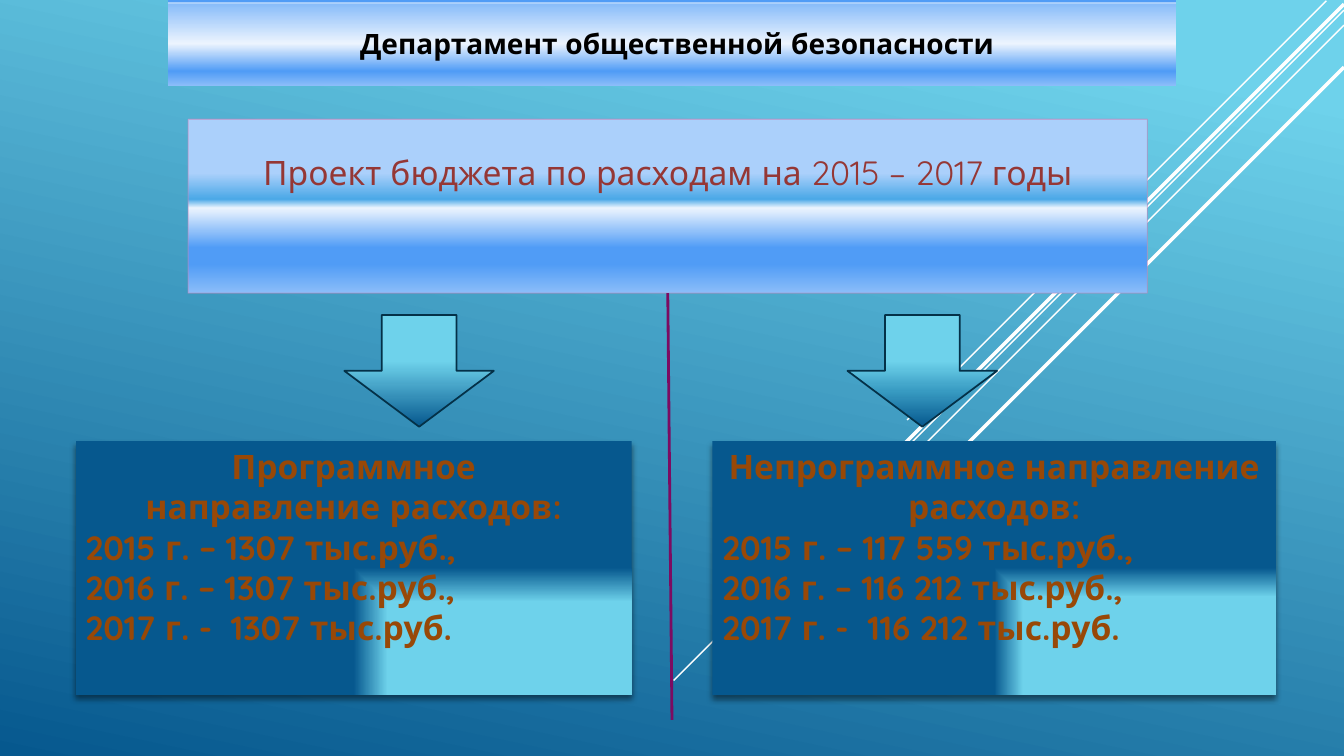
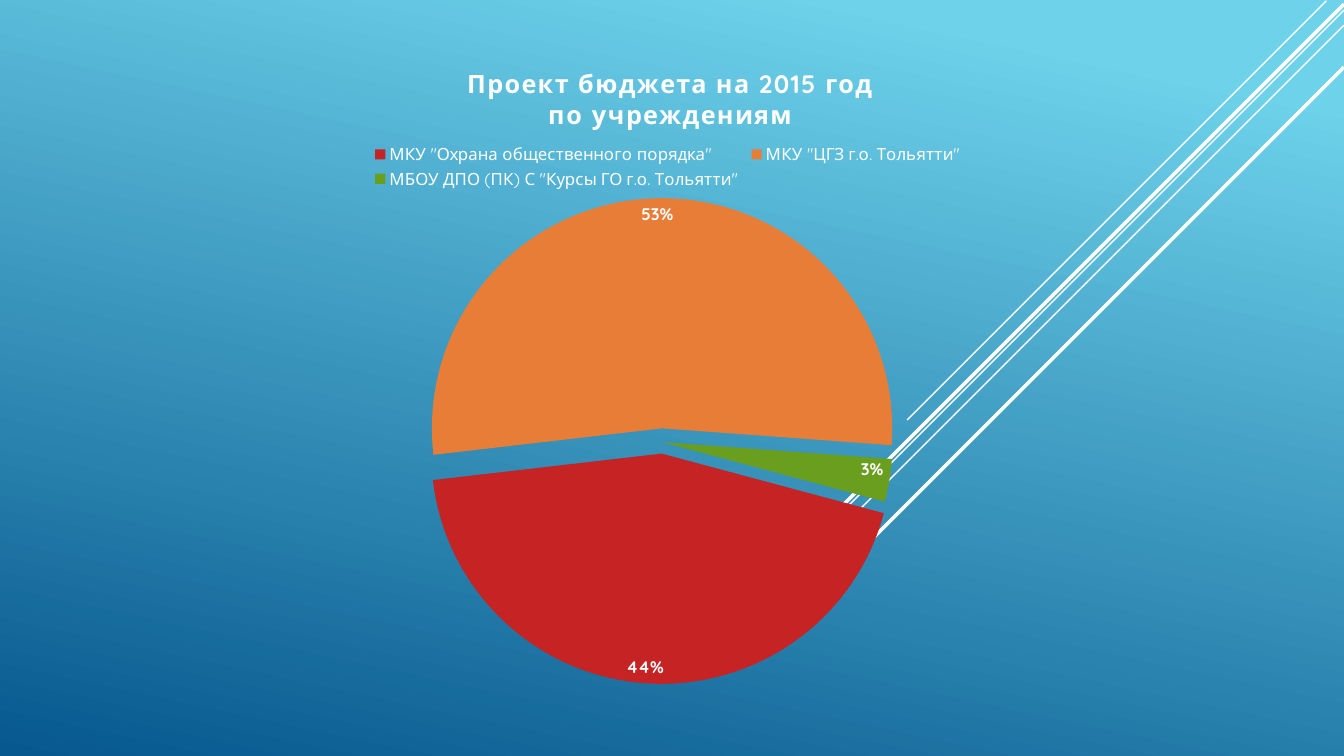
"""Build a two-slide deck on a public safety department's draft budget."""
from dataclasses import dataclass
from typing import NamedTuple

from lxml import etree
from pptx import Presentation
from pptx.chart.data import CategoryChartData
from pptx.dml.color import RGBColor
from pptx.enum.chart import XL_CHART_TYPE, XL_LABEL_POSITION, XL_LEGEND_POSITION
from pptx.enum.shapes import MSO_CONNECTOR, MSO_SHAPE
from pptx.enum.text import MSO_ANCHOR, PP_ALIGN
from pptx.oxml.ns import qn
from pptx.util import Emu, Inches, Pt

PIE = XL_CHART_TYPE.PIE
INSIDE_END = XL_LABEL_POSITION.INSIDE_END
LEGEND_TOP = XL_LEGEND_POSITION.TOP
STRAIGHT = MSO_CONNECTOR.STRAIGHT
RECTANGLE, DOWN_ARROW = MSO_SHAPE.RECTANGLE, MSO_SHAPE.DOWN_ARROW
TOP, MIDDLE = MSO_ANCHOR.TOP, MSO_ANCHOR.MIDDLE
LEFT, CENTER = PP_ALIGN.LEFT, PP_ALIGN.CENTER
BOTTOM_SIDE = 2
COLUMNS, ROWS = 160, 90
CELL = Inches(1) // 12
BLANK_LAYOUT = 6

Stops = tuple[tuple[int, str], ...]


@dataclass(frozen=True)
class Theme:
    """Colours, gradients and type sizes of the deck."""
    font: str = "Quicksand"
    white: str = "FFFFFF"
    black: str = "000000"
    heading: str = "953735"
    body: str = "984807"
    divider: str = "7C0B61"
    heading_edge: str = "C089BD"
    arrow_edge: str = "043148"
    slices: tuple[str, ...] = ("C62324", "E87D37", "6A9E1F")
    backdrop: Stops = ((10, "6ED2EB"), (100, "06588E"))
    title_band: Stops = ((2, "509CF6"), (3, "ABD0FB"), (5, "ABD0FB"), (5, "8ABDF9"),
                         (51, "ECF4FE"), (83, "509CF6"), (100, "8BBDF9"))
    heading_band: Stops = ((31, "ABD0FB"), (46, "4AA8E7"), (51, "ECF4FE"),
                           (74, "509CF6"), (83, "509CF6"), (100, "8BBDF9"))
    title_size: int = 20
    body_size: int = 24
    chart_title_size: int = 18
    legend_size: int = 12
    chart_size: int = 10


THEME = Theme()


class Frame(NamedTuple):
    """Place and size in grid columns and rows."""
    column: float
    row: float
    width: float
    height: float

    def lengths(self) -> list[Emu]:
        """Return the four lengths for python-pptx."""
        return [cells(value) for value in self]


class Ray(NamedTuple):
    """Diagonal line running down and left from a start cell."""
    column: float
    row: float
    reach: float
    points: float


class Direction(NamedTuple):
    """Spending direction: its box, heading lines, amounts, arrow and stops."""
    frame: Frame
    heading: tuple[str, ...]
    amounts: tuple[str, ...]
    arrow_column: float
    box_stops: Stops
    arrow_stops: Stops


class Share(NamedTuple):
    """Slice of the budget chart."""
    name: str
    percent: int
    explosion: int


RAYS = (
    Ray(157.9, 0.1, 49.9, 1),
    Ray(160, 1.2, 79.8, 1),
    Ray(160, 3, 65.1, 1),
    Ray(160, 0.5, 63.7, 2.5),
    Ray(160, 8, 57, 2.5),
)
DIRECTIONS = (
    Direction(
        Frame(9, 52.5, 66.2, 30.2),
        ("Программное", "направление расходов:"),
        ("2015 г. – 1307 тыс.руб.,", "2016 г. – 1307 тыс.руб.,", "2017 г. -  1307 тыс.руб."),
        41, ((73, "6ED2EB"), (100, "06588E")), ((41, "6ED2EB"), (100, "06588E"))),
    Direction(
        Frame(84.8, 52.5, 67.1, 30.2),
        ("Непрограммное направление расходов:",),
        ("2015 г. – 117 559 тыс.руб.,", "2016 г. – 116 212 тыс.руб.,",
         "2017 г. -  116 212 тыс.руб."),
        100.9, ((77, "6ED2EB"), (100, "06588E")),
        ((41, "6ED2EB"), (68, "389BC2"), (100, "06588E"))),
)
SHARES = (
    Share('МКУ "Охрана общественного порядка"', 44, 5),
    Share('МКУ "ЦГЗ г.о. Тольятти"', 53, 6),
    Share('МБОУ ДПО (ПК) С "Курсы ГО г.о. Тольятти"', 3, 0),
)


def cells(count: float) -> Emu:
    """Convert grid cells to a length."""
    return Emu(round(count * CELL))


def add_node(parent, tag: str, **attributes):
    """Append an XML child with attributes."""
    return etree.SubElement(parent, qn(tag), {key: str(value) for key, value in attributes.items()})


def paint(fill, owner, stops: Stops, angle: float | None = None) -> None:
    """Give a fill gradient stops, linear by angle or spreading from the lower right corner."""
    fill.gradient()
    gradient = owner.find(".//" + qn("a:gradFill"))
    for child in list(gradient):
        gradient.remove(child)
    stop_list = add_node(gradient, "a:gsLst")
    for position, colour in stops:
        add_node(add_node(stop_list, "a:gs", pos=position * 1000), "a:srgbClr", val=colour)
    if angle is None:
        add_node(add_node(gradient, "a:path", path="rect"), "a:fillToRect", l=100000, t=100000)
    else:
        add_node(gradient, "a:lin", ang=round(angle * 60000), scaled=0)


def style_font(font, size: float, colour: str, bold: bool = False) -> None:
    """Set face, size, colour and weight."""
    font.name, font.size, font.bold = THEME.font, Pt(size), bold
    font.color.rgb = RGBColor.from_string(colour)


def style_line(line, colour: str, points: float) -> None:
    """Set an outline's colour and width."""
    line.color.rgb = RGBColor.from_string(colour)
    line.width = Pt(points)


def add_line(page, start: tuple[float, float], end: tuple[float, float],
             colour: str, points: float):
    """Draw a flat straight line between two grid points."""
    line = page.shapes.add_connector(STRAIGHT, *(cells(value) for value in (*start, *end)))
    style_line(line.line, colour, points)
    add_node(line.element.spPr, "a:effectLst")
    return line


def add_panel(page, kind, frame: Frame, stops: Stops, angle: float | None = 90):
    """Draw a gradient shape without outline or shadow."""
    panel = page.shapes.add_shape(kind, *frame.lengths())
    paint(panel.fill, panel.element, stops, angle)
    panel.line.fill.background()
    panel.shadow.inherit = False
    return panel


def write(panel, lines: list[tuple[str, PP_ALIGN]], size: float, colour: str,
          bold: bool, anchor=TOP, spacing: float = 1.0) -> None:
    """Write aligned paragraphs into a shape."""
    frame = panel.text_frame
    frame.word_wrap, frame.vertical_anchor = True, anchor
    frame.text = "\n".join(text for text, _ in lines)
    for para, (_, alignment) in zip(frame.paragraphs, lines):
        para.alignment, para.line_spacing = alignment, spacing
        for span in para.runs:
            style_font(span.font, size, colour, bold)


def cast_shadow(panel) -> None:
    """Drop a soft shadow below a shape."""
    effects = panel.element.spPr.find(qn("a:effectLst"))
    shadow = add_node(effects, "a:outerShdw", blurRad=Pt(4), dist=Pt(3), dir=5400000, rotWithShape=0)
    add_node(add_node(shadow, "a:srgbClr", val=THEME.black), "a:alpha", val=46000)


def add_page(deck):
    """Add a blank page with the diagonal rays."""
    page = deck.slides.add_slide(deck.slide_layouts[BLANK_LAYOUT])
    for ray in RAYS:
        add_line(page, (ray.column, ray.row), (ray.column - ray.reach, ray.row + ray.reach),
                 THEME.white, ray.points)
    return page


def add_direction(page, direction: Direction) -> None:
    """Draw a spending box and the arrow leading to it."""
    box = add_panel(page, RECTANGLE, direction.frame, direction.box_stops, None)
    cast_shadow(box)
    lines = [(text, CENTER) for text in direction.heading]
    lines += [(text, LEFT) for text in direction.amounts]
    write(box, lines, THEME.body_size, THEME.body, True)
    arrow = add_panel(page, DOWN_ARROW, Frame(direction.arrow_column, 37.5, 17.8, 13.3),
                      direction.arrow_stops)
    style_line(arrow.line, THEME.arrow_edge, 1.25)


def build_directions(deck) -> None:
    """Build the page with the two spending directions."""
    page = add_page(deck)
    title = add_panel(page, RECTANGLE, Frame(20, 0, 120, 10.2), THEME.title_band)
    title.text_frame.margin_left, title.text_frame.margin_top = Inches(0.2), Inches(0.12)
    write(title, [("Департамент общественной безопасности", CENTER)],
          THEME.title_size, THEME.black, True, MIDDLE, 0.8)
    heading = add_panel(page, RECTANGLE, Frame(22.4, 14.2, 114.2, 20.7), THEME.heading_band)
    style_line(heading.line, THEME.heading_edge, 0.75)
    edge_colour = heading.element.spPr.find(qn("a:ln")).find(".//" + qn("a:srgbClr"))
    add_node(edge_colour, "a:alpha", val=60000)
    heading.text_frame.margin_top = Inches(0.4)
    write(heading, [("Проект бюджета по расходам на 2015 – 2017 годы", CENTER)],
          THEME.body_size, THEME.heading, False, TOP, 0.8)
    divider = add_line(page, (79.5, 34.9), (80, 85.7), THEME.divider, 2)
    divider.begin_connect(heading, BOTTOM_SIDE)
    for direction in DIRECTIONS:
        add_direction(page, direction)


def place(part, index: int, **shares: float) -> None:
    """Fix a chart part's place in shares of the chart."""
    for layout in part.findall(qn("c:layout")):
        part.remove(layout)
    layout = etree.Element(qn("c:layout"))
    part.insert(index, layout)
    manual = add_node(layout, "c:manualLayout")
    if part.tag == qn("c:plotArea"):
        add_node(manual, "c:layoutTarget", val="inner")
    for mode in ("c:xMode", "c:yMode"):
        add_node(manual, mode, val="edge")
    for name, share in shares.items():
        add_node(manual, "c:" + name, val=share)


def build_shares(deck) -> None:
    """Build the page with the pie chart of institutions."""
    page = add_page(deck)
    data = CategoryChartData()
    data.categories = [share.name for share in SHARES]
    data.add_series("Series 1", [share.percent for share in SHARES])
    frame = Frame(15.7, 4.4, 127.6, 77.2)
    chart = page.shapes.add_chart(PIE, *frame.lengths(), data).chart
    style_font(chart.font, THEME.chart_size, THEME.white)
    chart.has_title = chart.has_legend = True
    title = chart.chart_title.text_frame
    title.text = "Проект бюджета на 2015 год\nпо учреждениям"
    for para in title.paragraphs:
        para.alignment = CENTER
        for span in para.runs:
            style_font(span.font, THEME.chart_title_size, THEME.white, True)
    chart.legend.position, chart.legend.include_in_layout = LEGEND_TOP, False
    style_font(chart.legend.font, THEME.legend_size, THEME.white)
    plot = chart.plots[0]
    plot.vary_by_categories = plot.has_data_labels = True
    labels = plot.data_labels
    labels.show_percentage, labels.show_value, labels.position = True, False, INSIDE_END
    style_font(labels.font, THEME.legend_size, THEME.white, True)
    for index, colour in enumerate(THEME.slices):
        fill = plot.series[0].points[index].format.fill
        fill.solid()
        fill.fore_color.rgb = RGBColor.from_string(colour)
    root = chart.element
    for point, share in zip(root.iter(qn("c:dPt")), SHARES):
        explosion = etree.Element(qn("c:explosion"), val=str(share.explosion))
        point.find(qn("c:spPr")).addprevious(explosion)
    pie = root.find(".//" + qn("c:pieChart"))
    for angle in pie.findall(qn("c:firstSliceAng")):
        pie.remove(angle)
    add_node(pie, "c:firstSliceAng", val=105)
    title_part = root.find(".//" + qn("c:title"))
    for properties in title_part.iter(qn("a:rPr")):
        properties.set("spc", "100")
    place(title_part, 1, x=0.31, y=0.04)
    place(root.find(".//" + qn("c:legend")), 1, x=0.22, y=0.16, w=0.56, h=0.08)
    place(root.find(".//" + qn("c:plotArea")), 0, x=0.28, y=0.27, w=0.43, h=0.71)


def main() -> None:
    """Build and save the deck."""
    deck = Presentation()
    deck.slide_width, deck.slide_height = cells(COLUMNS), cells(ROWS)
    paint(deck.slide_master.background.fill, deck.slide_master.element, THEME.backdrop, 102)
    build_directions(deck)
    build_shares(deck)
    deck.save("out.pptx")


if __name__ == "__main__":
    main()
